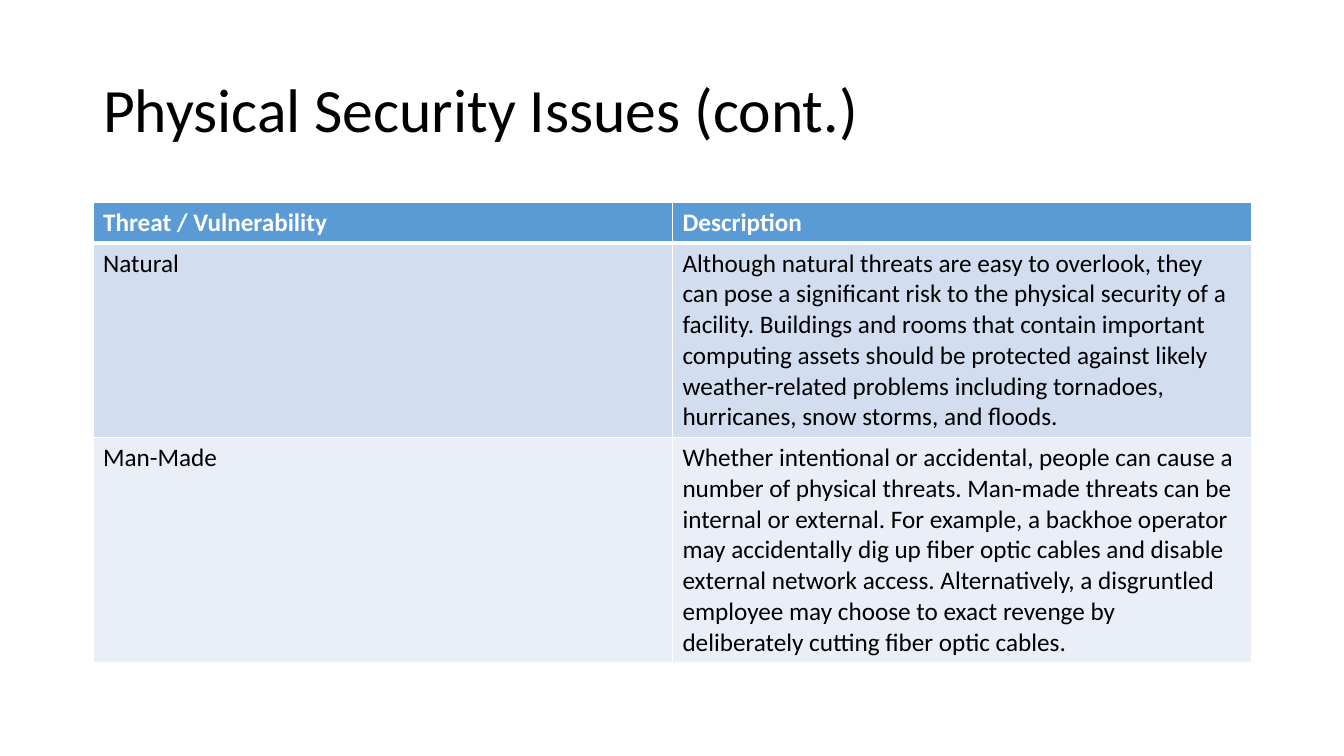
from lxml.etree import SubElement
from pptx import Presentation
from pptx.dml.color import RGBColor
from pptx.enum.text import MSO_ANCHOR, PP_ALIGN
from pptx.oxml.ns import qn
from pptx.util import Emu, Pt

TITLE = "Physical Security Issues (cont.)"
# Each cell is a list of paragraphs.
ROWS = [
    (["Threat / Vulnerability"], ["Description"]),
    (["Natural"],
     ["Although natural threats are easy to overlook, they can pose a significant risk to the "
      "physical security of a facility. Buildings and rooms that contain important computing "
      "assets should be protected against likely weather-related problems including tornadoes, "
      "hurricanes, snow storms, and floods."]),
    (["Man-Made"],
     ["Whether intentional or accidental, people can cause a number of physical threats. "
      "Man-made threats can be internal or external. For example, a backhoe operator may "
      "accidentally dig up fiber optic cables and disable",
      "external network access. Alternatively, a disgruntled employee may choose to exact "
      "revenge by deliberately cutting fiber optic cables."]),
]

FONT = "Calibri"
BLACK = RGBColor(0x00, 0x00, 0x00)
WHITE = RGBColor(0xFF, 0xFF, 0xFF)
HEADER_BLUE = RGBColor(0x5B, 0x9B, 0xD5)
BAND_BLUE = RGBColor(0xD2, 0xDE, 0xEF)
PALE_BLUE = RGBColor(0xEA, 0xEF, 0xF7)
ROW_FILLS = [HEADER_BLUE, BAND_BLUE, PALE_BLUE]

SLIDE_WIDTH, SLIDE_HEIGHT = 1344, 756
LEFT, WIDTH = 93, 1159
TITLE_TOP, TITLE_HEIGHT = 40, 146
TABLE_TOP, ROW_HEIGHT = 202, 41


def px(length):
    return Emu(round(length * 914400 / 100.8))


def add_span(para, text, size, color, bold=False):
    span = para.add_run()
    span.text = text
    font = span.font
    font.name, font.size, font.bold = FONT, Pt(size), bold
    font.color.rgb = color


def set_borders(cell, bottom, top):
    """Draw white cell borders; call before the fill, which must follow them in the XML."""
    properties = cell._tc.get_or_add_tcPr()
    for tag, points in (("a:lnL", 1), ("a:lnR", 1), ("a:lnT", top), ("a:lnB", bottom)):
        line = SubElement(properties, qn(tag), w=str(Pt(points)))
        fill = SubElement(line, qn("a:solidFill"))
        SubElement(fill, qn("a:srgbClr"), val=str(WHITE))


def add_title(page):
    title = page.shapes.title
    title.left, title.top = px(LEFT), px(TITLE_TOP)
    title.width, title.height = px(WIDTH), px(TITLE_HEIGHT)
    frame = title.text_frame
    frame.vertical_anchor = MSO_ANCHOR.MIDDLE
    para = frame.paragraphs[0]
    para.alignment = PP_ALIGN.LEFT
    para.line_spacing = 0.9
    add_span(para, TITLE, 44, BLACK)


def add_threat_table(page):
    table = page.shapes.add_table(
        len(ROWS), len(ROWS[0]), px(LEFT), px(TABLE_TOP), px(WIDTH), px(ROW_HEIGHT * len(ROWS))
    ).table
    for row_index, (row, color) in enumerate(zip(ROWS, ROW_FILLS)):
        is_header = row_index == 0
        for column_index, paragraphs in enumerate(row):
            cell = table.cell(row_index, column_index)
            set_borders(cell, bottom=3 if is_header else 1, top=3 if row_index == 1 else 1)
            cell.fill.solid()
            cell.fill.fore_color.rgb = color
            frame = cell.text_frame
            for index, text in enumerate(paragraphs):
                para = frame.add_paragraph() if index else frame.paragraphs[0]
                add_span(para, text, 18, WHITE if is_header else BLACK, bold=is_header)


def main():
    deck = Presentation()
    deck.slide_width, deck.slide_height = px(SLIDE_WIDTH), px(SLIDE_HEIGHT)
    page = deck.slides.add_slide(deck.slide_layouts[5])
    add_title(page)
    add_threat_table(page)
    deck.save("out.pptx")


if __name__ == "__main__":
    main()
